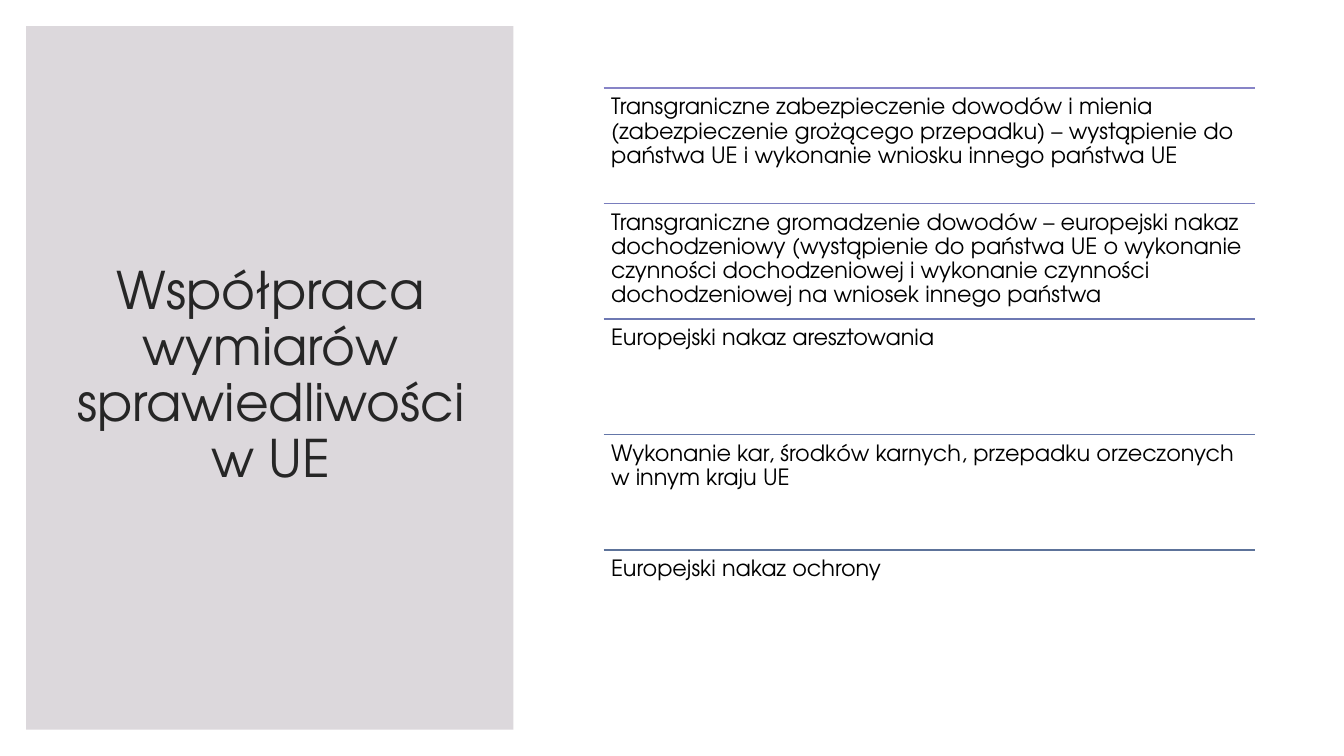
from lxml import etree
from pptx import Presentation
from pptx.dml.color import RGBColor
from pptx.enum.shapes import MSO_CONNECTOR as CONN, MSO_SHAPE as SHAPE
from pptx.enum.text import MSO_ANCHOR as ANCHOR, PP_ALIGN as ALIGN
from pptx.oxml.ns import qn
from pptx.util import Pt

PX = 9525
WIDTH, HEIGHT = 1280, 720

TITLE = "Współpraca wymiarów sprawiedliwości w UE"
ITEMS = [
    ("8784C7", "Transgraniczne zabezpieczenie dowodów i mienia (zabezpieczenie "
               "grożącego przepadku) – wystąpienie do państwa UE i wykonanie "
               "wniosku innego państwa UE"),
    ("797DBD", "Transgraniczne gromadzenie dowodów – europejski nakaz "
               "dochodzeniowy (wystąpienie do państwa UE o wykonanie czynności "
               "dochodzeniowej i wykonanie czynności dochodzeniowej na wniosek "
               "innego państwa"),
    ("6E79B3", "Europejski nakaz aresztowania"),
    ("6476A8", "Wykonanie kar, środków karnych, przepadku orzeczonych "
               "w innym kraju UE"),
    ("5D739A", "Europejski nakaz ochrony"),
]
ITEM_LEFT, ITEM_TOP, ITEM_WIDTH, ITEM_STEP = 575, 84, 620, 110


def rgb(color):
    return RGBColor.from_string(color)


def px(*lengths):
    return [n * PX for n in lengths]


class SlideBuilder:
    font = "TeX Gyre Adventor"
    line_spacing = 0.9

    def __init__(self, prs):
        self.slide = prs.slides.add_slide(prs.slide_layouts[6])

    def background(self, color):
        fill = self.slide.background.fill
        fill.solid()
        fill.fore_color.rgb = rgb(color)

    def panel(self, x, y, w, h, color):
        sp = self.slide.shapes.add_shape(SHAPE.RECTANGLE, *px(x, y, w, h))
        sp.shadow.inherit = False
        sp.fill.solid()
        sp.fill.fore_color.rgb = rgb(color)
        sp.line.fill.background()

    def rule(self, x, y, w, color):
        line = self.slide.shapes.add_connector(CONN.STRAIGHT, *px(x, y, x + w, y))
        line.line.color.rgb = rgb(color)
        line.line.width = Pt(1)
        etree.SubElement(line._element.spPr, qn("a:effectLst"))

    def text(self, x, y, w, h, text, size, color="000000", inset=7,
             align=ALIGN.LEFT, anchor=ANCHOR.TOP):
        tf = self.slide.shapes.add_textbox(*px(x, y, w, h)).text_frame
        tf.word_wrap = True
        tf.vertical_anchor = anchor
        tf.margin_left, tf.margin_top, tf.margin_right, tf.margin_bottom = px(*[inset] * 4)
        tf.text = text
        p = tf.paragraphs[0]
        p.alignment = align
        p.line_spacing = self.line_spacing
        font = p.runs[0].font
        font.name = self.font
        font.size = Pt(size)
        font.color.rgb = rgb(color)


def main():
    prs = Presentation()
    prs.slide_width, prs.slide_height = px(WIDTH, HEIGHT)
    s = SlideBuilder(prs)
    s.background("FFFFFF")
    s.panel(25, 25, 464, 670, "DCD8DC")
    s.text(60, 59, 396, 599, TITLE, 37, "262626", inset=9,
           align=ALIGN.CENTER, anchor=ANCHOR.MIDDLE)
    for i, (color, item) in enumerate(ITEMS):
        y = ITEM_TOP + i * ITEM_STEP
        s.rule(ITEM_LEFT, y, ITEM_WIDTH, color)
        s.text(ITEM_LEFT, y, ITEM_WIDTH, ITEM_STEP, item, 16)
    prs.save("out.pptx")


if __name__ == "__main__":
    main()
